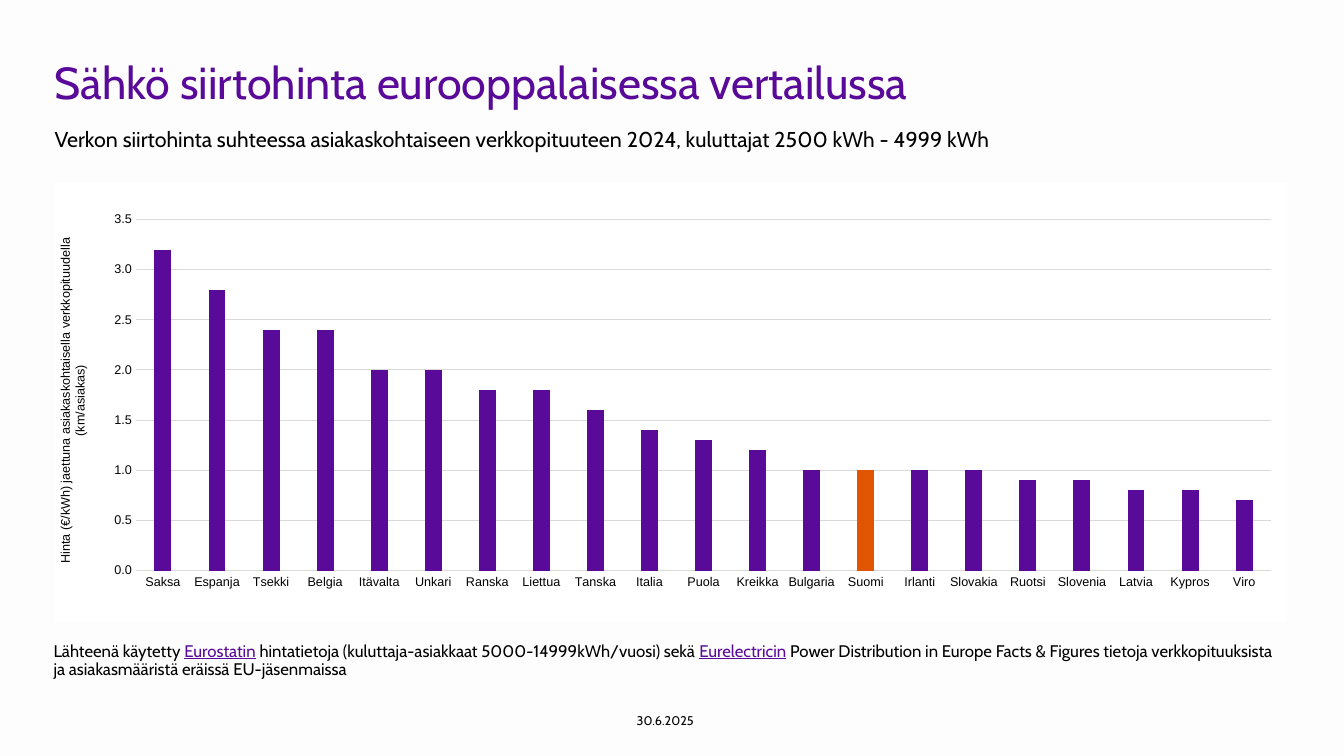
from dataclasses import dataclass

from lxml import etree
from pptx import Presentation
from pptx import util as u
from pptx.chart.data import CategoryChartData
from pptx.dml.color import RGBColor
from pptx.enum import chart as ch, text
from pptx.oxml import parse_xml
from pptx.oxml.ns import nsdecls, qn

PX = 9525  # EMU per px, 96 px to the inch


@dataclass(frozen=True)
class Theme:
    back: str = "FEFDFD"
    white: str = "FFFFFF"
    ink: str = "000000"
    brand: str = "590A99"
    accent: str = "E05500"
    grid: str = "D9D9D9"
    face: str = "Cabin"
    plain: str = "Arial"
    head: float = 32
    sub: float = 15.3
    note: float = 12
    small: float = 9
    base: float = 10


T = Theme()

PRICES = {
    "Saksa": 3.2, "Espanja": 2.8, "Tsekki": 2.4, "Belgia": 2.4,
    "Itävalta": 2, "Unkari": 2, "Ranska": 1.8, "Liettua": 1.8,
    "Tanska": 1.6, "Italia": 1.4, "Puola": 1.3, "Kreikka": 1.2,
    "Bulgaria": 1, "Suomi": 1, "Irlanti": 1, "Slovakia": 1,
    "Ruotsi": 0.9, "Slovenia": 0.9, "Latvia": 0.8, "Kypros": 0.8,
    "Viro": 0.7,
}


def rgb(code):
    return RGBColor.from_string(code)


def style(font, face, size, color):
    font.name, font.size, font.bold = face, u.Pt(size), False
    font.color.rgb = rgb(color)


def place(shape, box):
    shape.left, shape.top, shape.width, shape.height = (v * PX for v in box)


def write(shape, box, runs, size, color=T.ink, lead=1.0, right=10,
          align=text.PP_ALIGN.LEFT, anchor=text.MSO_ANCHOR.TOP):
    """Fill a text shape; runs are (words, is_link) pairs."""
    place(shape, box)
    frame = shape.text_frame
    frame.word_wrap, frame.auto_size = True, text.MSO_AUTO_SIZE.NONE
    frame.vertical_anchor = anchor
    frame.margin_left, frame.margin_right = 0, right * PX
    frame.margin_top = frame.margin_bottom = 5 * PX
    para = frame.paragraphs[0]
    para.alignment, para.line_spacing = align, lead
    para.space_before = u.Pt(0)
    props = para._p.get_or_add_pPr()
    props.set("marL", "0")
    props.set("indent", "0")
    etree.SubElement(props, qn("a:buNone"))
    style(para.font, T.face, size, color)
    for words, link in runs:
        run = para.add_run()
        run.text = words
        if link:
            run.font.underline = True
            run.font.color.rgb = rgb(T.brand)


def frame_plot(chart, x, y, w, h):
    """Fix the inner plot area and paint the chart area white."""
    area = chart.element.find(".//" + qn("c:plotArea"))
    for old in area.findall(qn("c:layout")):
        area.remove(old)
    parts = [("layoutTarget", "inner"), ("xMode", "edge"), ("yMode", "edge"),
             ("x", x), ("y", y), ("w", w), ("h", h)]
    inner = "".join(f'<c:{tag} val="{val}"/>' for tag, val in parts)
    area.insert(0, parse_xml(
        f'<c:layout {nsdecls("c")}><c:manualLayout>{inner}'
        '</c:manualLayout></c:layout>'))
    chart.element.find(qn("c:chart")).addnext(parse_xml(
        f'<c:spPr {nsdecls("c", "a")}><a:solidFill><a:srgbClr '
        f'val="{T.white}"/></a:solidFill><a:ln><a:noFill/></a:ln></c:spPr>'))


def rule(line):
    line.color.rgb, line.width = rgb(T.grid), u.Pt(0.75)


def add_bars(slide, box, prices, label, mark):
    data = CategoryChartData(number_format="0.0")
    data.categories = list(prices)
    data.add_series("Siirtohinta", list(prices.values()))
    chart = slide.shapes.add_chart(ch.XL_CHART_TYPE.COLUMN_CLUSTERED,
                                   *(v * PX for v in box), data).chart
    chart.has_title = chart.has_legend = False
    style(chart.font, T.plain, T.base, T.ink)
    frame_plot(chart, 0.066, 0.084, 0.921, 0.8)

    # Columns, with one country marked
    plot = chart.plots[0]
    plot.gap_width, plot.overlap = 219, -27
    plot.vary_by_categories = False
    bars = plot.series[0]
    bars.invert_if_negative = False
    point = bars.points[list(prices).index(mark)]
    for part, color in ((bars, T.brand), (point, T.accent)):
        part.format.fill.solid()
        part.format.fill.fore_color.rgb = rgb(color)

    # Axes
    cat, val = chart.category_axis, chart.value_axis
    for axis in (cat, val):
        axis.major_tick_mark = axis.minor_tick_mark = ch.XL_TICK_MARK.NONE
        style(axis.tick_labels.font, T.plain, T.small, T.ink)
    rule(cat.format.line)
    val.format.line.fill.background()
    rule(val.major_gridlines.format.line)
    val.minimum_scale, val.maximum_scale, val.major_unit = 0, 3.5, 0.5
    val.tick_labels.number_format = "0.0"
    val.tick_labels.number_format_is_linked = False
    name = val.axis_title.text_frame
    name.text = label
    style(name.paragraphs[0].font, T.plain, T.small, T.ink)


def main():
    deck = Presentation()
    deck.slide_width, deck.slide_height = 1280 * PX, 720 * PX
    slide = deck.slides.add_slide(deck.slide_layouts[3])
    slide.background.fill.solid()
    slide.background.fill.fore_color.rgb = rgb(T.back)
    title, sub, note = slide.placeholders

    # Heading and subheading
    write(title, (52, 53, 1174, 105),
          [("Sähkö siirtohinta eurooppalaisessa vertailussa", False)],
          T.head, T.brand, lead=0.9)
    write(sub, (52, 122, 1175, 29),
          [("Verkon siirtohinta suhteessa asiakaskohtaiseen verkkopituuteen "
            "2024, kuluttajat 2500 kWh - 4999 kWh", False)], T.sub, lead=0.7)

    # Price chart
    add_bars(slide, (52, 174, 1174, 418), PRICES,
             "Hinta (€/kWh) jaettuna asiakaskohtaisella verkkopituudella "
             "(km/asiakas)", "Suomi")

    # Sources and date
    write(note, (51, 607, 1175, 22),
          [("Lähteenä käytetty ", False), ("Eurostatin", True),
           (" hintatietoja (kuluttaja-asiakkaat 5000-14999kWh/vuosi) sekä ",
            False), ("Eurelectricin", True),
           (" Power Distribution in Europe Facts & Figures tietoja "
            "verkkopituuksista ja asiakasmääristä eräissä EU-jäsenmaissa",
            False)], T.note, lead=0.9)
    write(slide.shapes.add_textbox(0, 0, 0, 0), (580, 667, 107, 38),
          [("30.6.2025", False)], T.small, right=0,
          align=text.PP_ALIGN.CENTER, anchor=text.MSO_ANCHOR.MIDDLE)

    deck.save("out.pptx")


if __name__ == "__main__":
    main()
